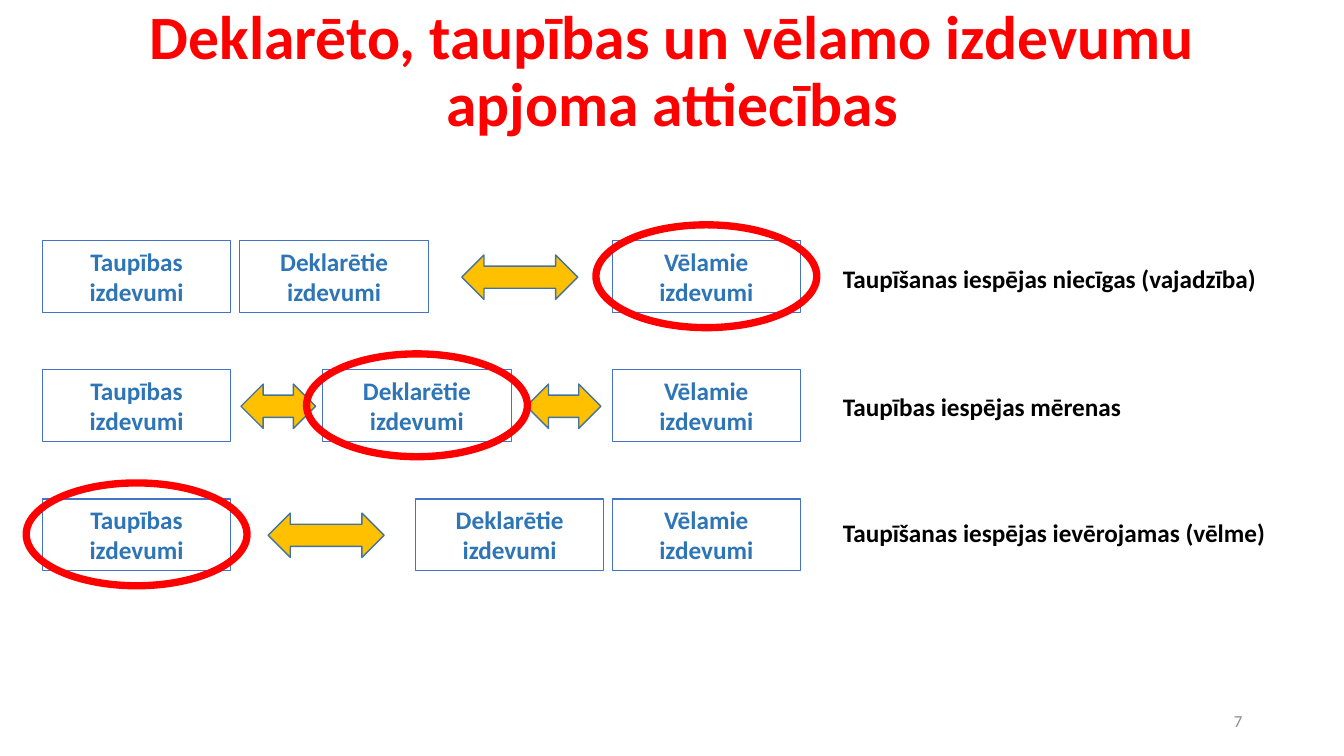
import pptx
import pptx.util
import pptx.dml.color
import pptx.enum.shapes
import pptx.enum.text

RGBColor = pptx.dml.color.RGBColor
Shape = pptx.enum.shapes.MSO_SHAPE
Align = pptx.enum.text.PP_ALIGN
Anchor = pptx.enum.text.MSO_ANCHOR

RED = RGBColor(0xFF, 0x00, 0x00)
GRAY = RGBColor(0x8C, 0x8C, 0x8C)
BLACK = RGBColor(0x00, 0x00, 0x00)
BLUE = RGBColor(0x2E, 0x75, 0xB6)
EDGE = RGBColor(0x44, 0x72, 0xC4)
GOLD = RGBColor(0xFF, 0xC0, 0x00)
STEEL = RGBColor(0x43, 0x73, 0x9E)

WIDTH = pptx.util.Inches(13.33)
HEIGHT = pptx.util.Inches(7.5)

TOP, PITCH = 31.87, 17.07
BOX_W, BOX_H = 14.03, 9.47
NAMES = ["Taupības izdevumi", "Deklarētie izdevumi", "Vēlamie izdevumi"]
ROWS = [
    {"boxes": [3.15, 17.85, 45.54], "arrows": [(34.36, 8.63)], "ring": 2,
     "label": "Taupīšanas iespējas niecīgas (vajadzība)", "drop": 2.27},
    {"boxes": [3.15, 24.01, 45.54], "arrows": [(17.93, 5.55), (39.16, 5.55)], "ring": 1,
     "label": "Taupības iespējas mērenas", "drop": 2.13},
    {"boxes": [3.15, 30.91, 45.54], "arrows": [(19.95, 8.63)], "ring": 0,
     "label": "Taupīšanas iespējas ievērojamas (vēlme)", "drop": 1.73},
]


def place(x, y, w, h):
    return (round(WIDTH * x / 100), round(HEIGHT * y / 100),
            round(WIDTH * w / 100), round(HEIGHT * h / 100))


def write(item, text, size=18, color=BLACK, bold=True, align=Align.LEFT,
          anchor=Anchor.TOP, space=1.0):
    frame = item.text_frame
    frame.word_wrap = True
    frame.vertical_anchor = anchor
    para = frame.paragraphs[0]
    para.alignment = align
    para.line_spacing = space
    run = para.add_run()
    run.text = text
    run.font.name = "Calibri"
    run.font.size = pptx.util.Pt(size)
    run.font.bold = bold
    run.font.color.rgb = color


def add_text(slide, area, text, **style):
    write(slide.shapes.add_textbox(*place(*area)), text, **style)


def add_form(slide, kind, area, line, weight, fill=None):
    form = slide.shapes.add_shape(kind, *place(*area))
    form.shadow.inherit = False
    if fill is None:
        form.fill.background()
    else:
        form.fill.solid()
        form.fill.fore_color.rgb = fill
    form.line.color.rgb = line
    form.line.width = pptx.util.Pt(weight)
    return form


def add_box(slide, x, y, name):
    box = add_form(slide, Shape.RECTANGLE, (x, y, BOX_W, BOX_H), EDGE, 0.75)
    write(box, name, color=BLUE, align=Align.CENTER)


def add_arrow(slide, x, y, width):
    add_form(slide, Shape.LEFT_RIGHT_ARROW, (x, y + 1.87, width, 5.87), STEEL, 1, GOLD)


def add_ring(slide, x, y):
    add_form(slide, Shape.OVAL, (x - 1.2, y - 2.13, BOX_W + 2.4, BOX_H + 4.13), RED, 5.25)


def add_row(slide, row, y):
    for x, name in zip(row["boxes"], NAMES):
        add_box(slide, x, y, name)
    for x, width in row["arrows"]:
        add_arrow(slide, x, y, width)
    add_text(slide, (61.97, y + row["drop"], 33.31, 5.33), row["label"])
    add_ring(slide, row["boxes"][row["ring"]], y)


def main():
    deck = pptx.Presentation()
    deck.slide_width, deck.slide_height = WIDTH, HEIGHT
    slide = deck.slides.add_slide(deck.slide_layouts[6])
    add_text(slide, (6.9, 0, 86.27, 19.33),
             "Deklarēto, taupības un vēlamo izdevumu apjoma attiecības",
             size=44, color=RED, align=Align.CENTER, anchor=Anchor.MIDDLE, space=0.9)
    add_text(slide, (70.67, 92.67, 22.5, 5.33), "7", size=12, color=GRAY,
             bold=False, align=Align.RIGHT, anchor=Anchor.MIDDLE)
    for index, row in enumerate(ROWS):
        add_row(slide, row, TOP + index * PITCH)
    deck.save("out.pptx")


if __name__ == "__main__":
    main()
